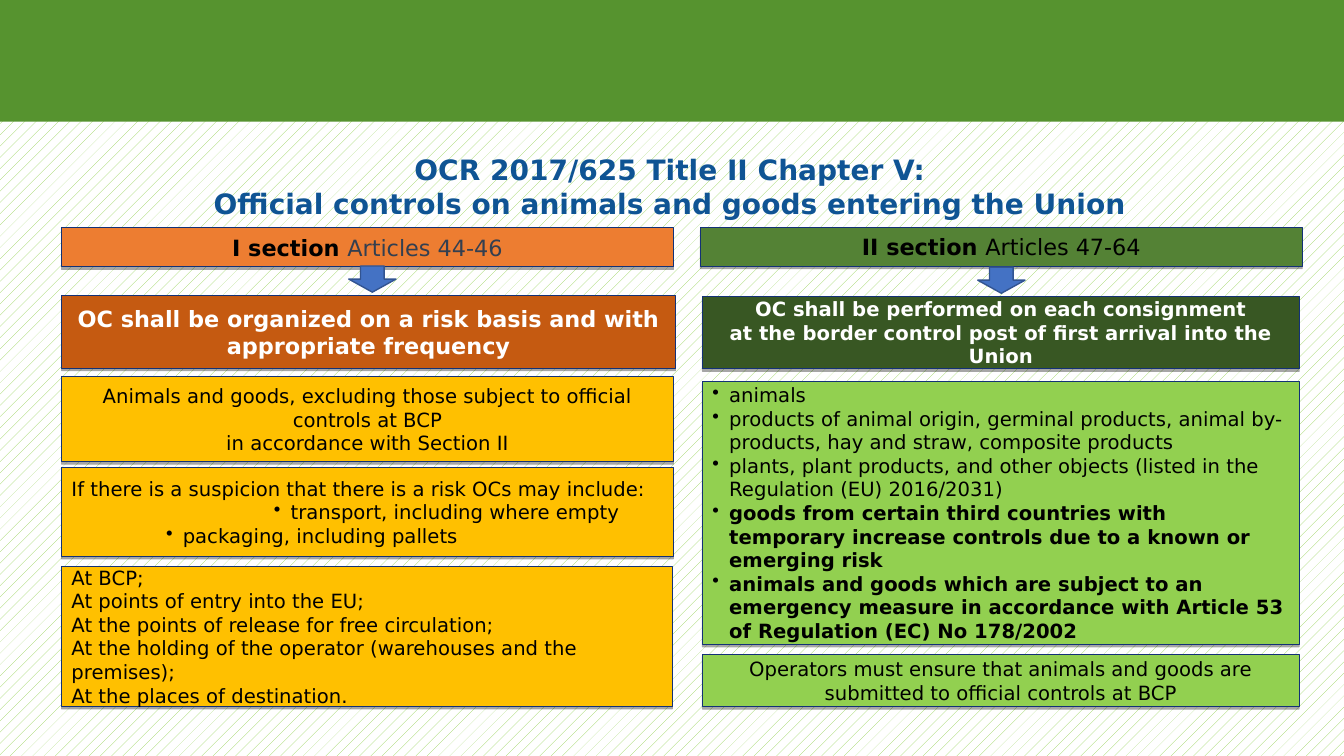
from dataclasses import dataclass

from lxml.etree import SubElement
from pptx import Presentation
from pptx.dml.color import RGBColor
from pptx.enum.dml import MSO_PATTERN
from pptx.enum.shapes import MSO_SHAPE
from pptx.enum.text import MSO_ANCHOR, MSO_AUTO_SIZE, PP_ALIGN
from pptx.oxml.ns import qn
from pptx.shapes.autoshape import Shape
from pptx.slide import Slide
from pptx.text.text import TextFrame, _Paragraph
from pptx.util import Pt


@dataclass(frozen=True)
class Theme:
    font: str = "DejaVu Sans"
    title_size: float = 20
    heading_size: float = 16
    body_size: float = 14
    black: str = "000000"
    white: str = "FFFFFF"
    title: str = "0F5494"
    articles: str = "333F50"
    banner: str = "56932F"
    border: str = "133176"
    orange: str = "ED7D31"
    rust: str = "C55A11"
    amber: str = "FFC000"
    green: str = "548235"
    forest: str = "385723"
    lime: str = "92D050"
    arrow: str = "4472C4"
    arrow_border: str = "325491"


THEME = Theme()


@dataclass(frozen=True)
class Words:
    text: str
    bold: bool = False
    color: str = THEME.black


@dataclass(frozen=True)
class Line:
    words: tuple[Words, ...]
    align: PP_ALIGN = PP_ALIGN.LEFT
    bullet_at: float | None = None


@dataclass(frozen=True)
class Box:
    left: float
    top: float
    width: float
    height: float
    fill: str
    lines: tuple[Line, ...] = ()
    size: float = THEME.body_size
    border: str = THEME.border
    border_width: float = 0.75
    preset: MSO_SHAPE = MSO_SHAPE.RECTANGLE
    shaded: bool = True


def left(text: str) -> Line:
    return Line((Words(text),))


def centred(text: str, bold: bool = False, color: str = THEME.black) -> Line:
    return Line((Words(text, bold, color),), PP_ALIGN.CENTER)


def bulleted(text: str, bold: bool = False, at: float = 0) -> Line:
    return Line((Words(text, bold),), bullet_at=at)


def section(name: str, articles: str, color: str) -> tuple[Line, ...]:
    return (Line((Words(name + " ", True), Words(articles, False, color)), PP_ALIGN.CENTER),)


def arrow(x: float, y: float) -> Box:
    return Box(x, y, 33.8, 18.7, THEME.arrow, border=THEME.arrow_border, border_width=1,
               preset=MSO_SHAPE.DOWN_ARROW, shaded=False)


LEFT_X, LEFT_WIDTH = 44, 437
RIGHT_X, RIGHT_WIDTH = 501.8, 426.2
BULLET_GAP = 12

TITLE = (
    centred("OCR 2017/625 Title II Chapter V:", True, THEME.title),
    centred("Official controls on animals and goods entering the Union", True, THEME.title),
)

BOXES = (
    Box(LEFT_X, 404.6, 436.3, 100, THEME.amber, tuple(map(left, (
        "At BCP;",
        "At points of entry into the EU;",
        "At the points of release for free circulation;",
        "At the holding of the operator (warehouses and the premises);",
        "At the places of destination.",
    )))),
    Box(LEFT_X, 269.3, LEFT_WIDTH, 60.5, THEME.amber, (
        centred("Animals and goods, excluding those subject to official controls at BCP"),
        centred("in accordance with Section II"),
    )),
    Box(LEFT_X, 211, 438.5, 52, THEME.rust, (
        centred("OC shall be organized on a risk basis and with appropriate frequency",
                True, THEME.white),
    ), THEME.heading_size),
    Box(RIGHT_X, 467.3, RIGHT_WIDTH, 37.4, THEME.lime, (
        centred("Operators must ensure that animals and goods are submitted to "
                "official controls at BCP"),
    )),
    Box(LEFT_X, 162.7, LEFT_WIDTH, 28, THEME.orange,
        section("I section", "Articles 44-46", THEME.articles), THEME.heading_size),
    Box(500.4, 162.7, 429.8, 27.4, THEME.green,
        section("II section", "Articles 47-64", THEME.black), THEME.heading_size),
    Box(LEFT_X, 334, LEFT_WIDTH, 63.4, THEME.amber, (
        left("If there is a suspicion that there is a risk OCs may include:"),
        bulleted("transport, including where empty", at=144.5),
        bulleted("packaging, including pallets", at=67.5),
    )),
    Box(RIGHT_X, 272.2, RIGHT_WIDTH, 188, THEME.lime, (
        bulleted("animals"),
        bulleted("products of animal origin, germinal products, animal by-products, "
                 "hay and straw, composite products"),
        bulleted("plants, plant products, and other objects (listed in the "
                 "Regulation (EU) 2016/2031)"),
        bulleted("goods from certain third countries with temporary increase controls "
                 "due to a known or emerging risk", True),
        bulleted("animals and goods which are subject to an emergency measure in "
                 "accordance with Article 53 of Regulation (EC) No 178/2002", True),
    )),
    Box(RIGHT_X, 211.7, RIGHT_WIDTH, 51.8, THEME.forest, (
        centred("OC shall be performed on each consignment", True, THEME.white),
        centred("at the border control post of first arrival into the Union",
                True, THEME.white),
    )),
    arrow(249.1, 190),
    arrow(698.4, 190.8),
)


def rgb(color: str) -> RGBColor:
    return RGBColor.from_string(color)


def add_bullet(paragraph: _Paragraph, at: float) -> None:
    properties = paragraph._p.get_or_add_pPr()
    properties.set("marL", str(Pt(at + BULLET_GAP)))
    properties.set("indent", str(-Pt(BULLET_GAP)))
    SubElement(properties, qn("a:buChar"), char="•")


def write(frame: TextFrame, lines: tuple[Line, ...], size: float) -> None:
    frame.word_wrap = True
    frame.auto_size = MSO_AUTO_SIZE.NONE
    frame.vertical_anchor = MSO_ANCHOR.MIDDLE
    for index, line in enumerate(lines):
        paragraph = frame.add_paragraph() if index else frame.paragraphs[0]
        paragraph.alignment = line.align
        if line.bullet_at is not None:
            add_bullet(paragraph, line.bullet_at)
        for words in line.words:
            run = paragraph.add_run()
            run.text = words.text
            run.font.name = THEME.font
            run.font.size = Pt(size)
            run.font.bold = words.bold
            run.font.color.rgb = rgb(words.color)


def add_shade(shape: Shape) -> None:
    effects = shape._element.spPr.find(qn("a:effectLst"))
    shade = SubElement(effects, qn("a:outerShdw"), blurRad="0", dist=str(Pt(1.8)),
                       dir="5400000", rotWithShape="0")
    color = SubElement(shade, qn("a:srgbClr"), val=THEME.black)
    SubElement(color, qn("a:alpha"), val="35000")


def draw(slide: Slide, box: Box) -> None:
    shape = slide.shapes.add_shape(box.preset, Pt(box.left), Pt(box.top),
                                   Pt(box.width), Pt(box.height))
    shape.shadow.inherit = False
    shape.fill.solid()
    shape.fill.fore_color.rgb = rgb(box.fill)
    if box.border_width:
        shape.line.color.rgb = rgb(box.border)
        shape.line.width = Pt(box.border_width)
    else:
        shape.line.fill.background()
    if box.shaded:
        add_shade(shape)
    write(shape.text_frame, box.lines, box.size)


def main() -> None:
    deck = Presentation()
    deck.slide_width, deck.slide_height = Pt(960), Pt(540)
    slide = deck.slides.add_slide(deck.slide_layouts[5])
    backdrop = slide.background.fill
    backdrop.patterned()
    backdrop.pattern = MSO_PATTERN.PERCENT_10
    backdrop.fore_color.rgb = rgb(THEME.lime)
    backdrop.back_color.rgb = rgb(THEME.white)
    heading = slide.shapes.title
    heading.left, heading.top, heading.width, heading.height = Pt(40), Pt(103), Pt(877), Pt(60)
    write(heading.text_frame, TITLE, THEME.title_size)
    draw(slide, Box(0, -2, 960, 89, THEME.banner, border_width=0, shaded=False))
    for box in BOXES:
        draw(slide, box)
    deck.save("out.pptx")


if __name__ == "__main__":
    main()
